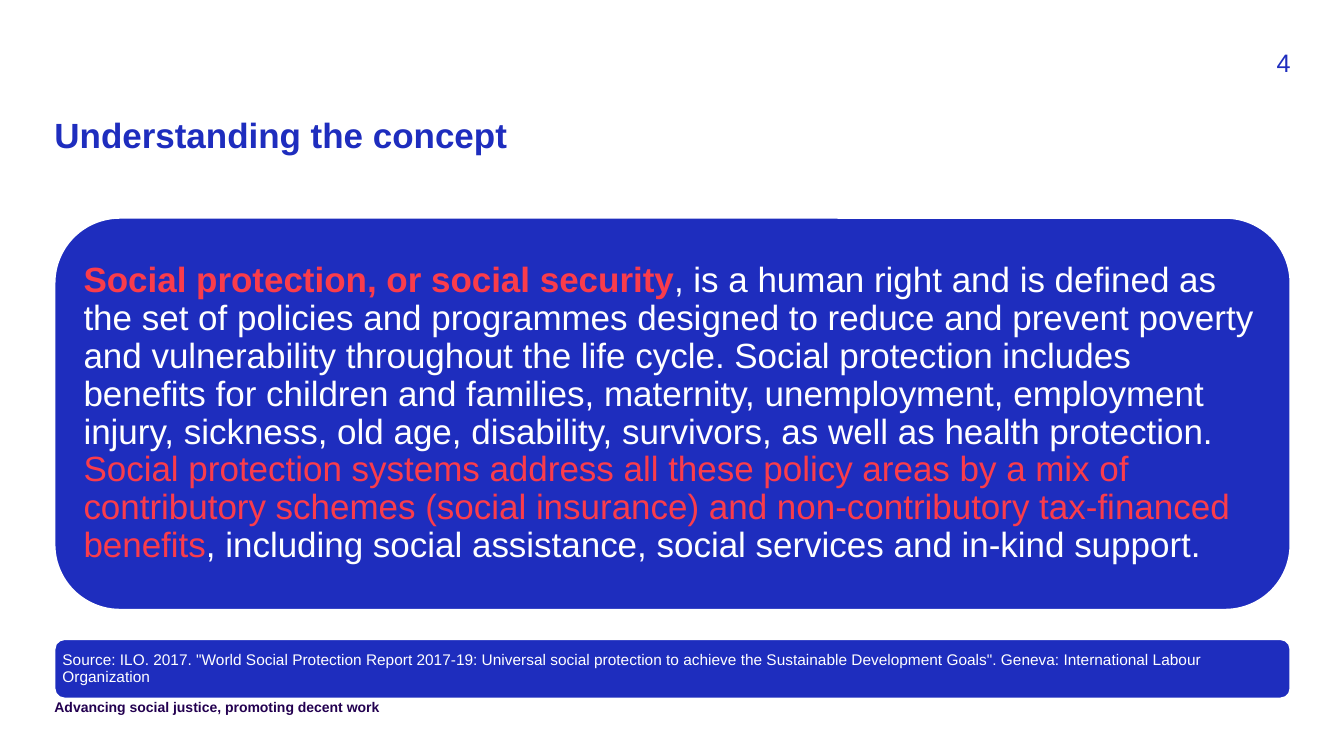
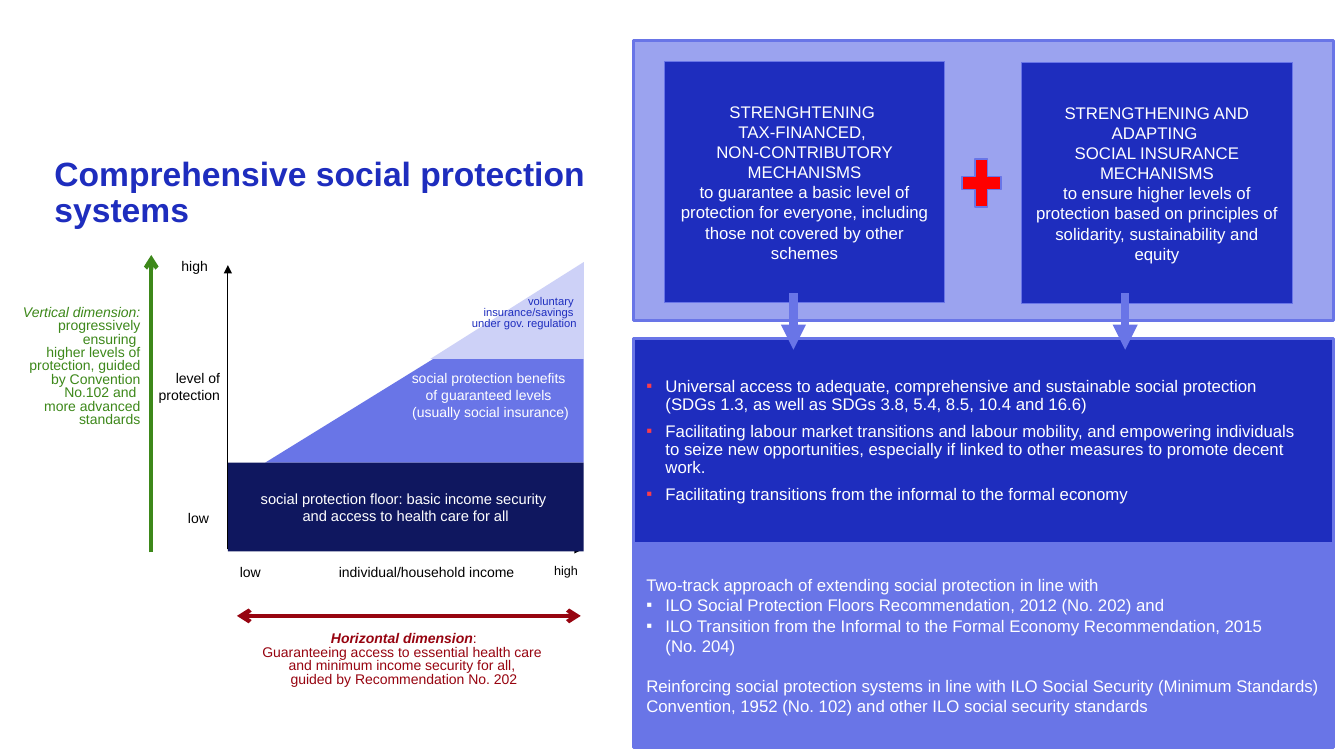
from dataclasses import dataclass
from typing import NamedTuple

from lxml.etree import SubElement
from pptx import Presentation
from pptx.dml.color import RGBColor
from pptx.enum.shapes import MSO_CONNECTOR, MSO_SHAPE
from pptx.enum.text import MSO_ANCHOR, MSO_AUTO_SIZE, PP_ALIGN
from pptx.oxml.ns import qn
from pptx.util import Inches, Pt

FONT = "Arial"
BLUE = RGBColor(0x1E, 0x2D, 0xBE)
MID_BLUE = RGBColor(0x69, 0x75, 0xE7)
LIGHT_BLUE = RGBColor(0x9B, 0xA3, 0xEF)
PALE_BLUE = RGBColor(0xCD, 0xD1, 0xF7)
NAVY = RGBColor(0x0F, 0x17, 0x5F)
PURPLE = RGBColor(0x23, 0x00, 0x50)
CORAL = RGBColor(0xFA, 0x3C, 0x4B)
RED = RGBColor(0xFF, 0x00, 0x00)
DARK_RED = RGBColor(0x97, 0x04, 0x10)
GREEN = RGBColor(0x3D, 0x88, 0x1A)
BLACK = RGBColor(0x00, 0x00, 0x00)
WHITE = RGBColor(0xFF, 0xFF, 0xFF)

LEFT, CENTER, RIGHT = PP_ALIGN.LEFT, PP_ALIGN.CENTER, PP_ALIGN.RIGHT
TOP, MIDDLE = MSO_ANCHOR.TOP, MSO_ANCHOR.MIDDLE
MARGIN, CONTENT_WIDTH = 0.54, 12.26
PANEL_LEFT, PANEL_WIDTH = 6.28, 6.95


class Box(NamedTuple):
    left: float
    top: float
    width: float
    height: float

    def lengths(self) -> list[Inches]:
        return [Inches(value) for value in self]


class Span(NamedTuple):
    text: str
    color: RGBColor | None = None
    bold: bool = False
    italic: bool = False


@dataclass
class Block:
    spans: list[Span]
    bullet: RGBColor | None = None
    before: float = 0
    after: float = 0


@dataclass
class Label:
    box: Box
    text: str
    align: PP_ALIGN = RIGHT
    size: float = 10
    color: RGBColor = BLACK
    spacing: float = 1


class Arrow(NamedTuple):
    start: tuple[float, float]
    end: tuple[float, float]
    color: RGBColor
    width: float
    tail: str
    head: str | None = None


def plain(text: str, **options) -> Block:
    return Block([Span(text)], **options)


def add_bullet(paragraph, color: RGBColor) -> None:
    properties = paragraph._p.get_or_add_pPr()
    properties.set("marL", str(Inches(0.19)))
    properties.set("indent", str(-Inches(0.19)))
    bullet_color = SubElement(properties, qn("a:buClr"))
    SubElement(bullet_color, qn("a:srgbClr")).set("val", str(color))
    SubElement(properties, qn("a:buFont")).set("typeface", FONT)
    SubElement(properties, qn("a:buChar")).set("char", "▪")


def write_text(frame, *blocks: Block, size: float, color: RGBColor, align=LEFT, anchor=TOP,
               spacing: float = 1, insets: tuple[float, float] = (0.1, 0.05)) -> None:
    frame.word_wrap = True
    frame.auto_size = MSO_AUTO_SIZE.NONE
    frame.vertical_anchor = anchor
    frame.margin_left = frame.margin_right = Inches(insets[0])
    frame.margin_top = frame.margin_bottom = Inches(insets[1])
    for index, block in enumerate(blocks):
        paragraph = frame.add_paragraph() if index else frame.paragraphs[0]
        if block.bullet is not None:
            add_bullet(paragraph, block.bullet)
        paragraph.alignment = align
        paragraph.line_spacing = spacing
        paragraph.space_before = Pt(block.before)
        paragraph.space_after = Pt(block.after)
        for span in block.spans:
            for number, line in enumerate(span.text.split("\n")):
                if number:
                    paragraph.add_line_break()
                if not line:
                    continue
                run = paragraph.add_run()
                run.text = line
                run.font.name = FONT
                run.font.size = Pt(size)
                run.font.bold = span.bold
                run.font.italic = span.italic
                run.font.color.rgb = span.color or color


def add_text(slide, box: Box, *blocks: Block, **options) -> None:
    write_text(slide.shapes.add_textbox(*box.lengths()).text_frame, *blocks, **options)


def add_label(slide, label: Label) -> None:
    add_text(slide, label.box, plain(label.text), size=label.size, color=label.color,
             align=label.align, spacing=label.spacing)


def add_figure(slide, kind: MSO_SHAPE, box: Box, fill: RGBColor,
               line: RGBColor | None = None, width: float = 1):
    shape = slide.shapes.add_shape(kind, *box.lengths())
    shape.shadow.inherit = False
    shape.fill.solid()
    shape.fill.fore_color.rgb = fill
    if line is None:
        shape.line.fill.background()
    else:
        shape.line.color.rgb = line
        shape.line.width = Pt(width)
    return shape


def add_wedge(slide, box: Box, fill: RGBColor) -> None:
    shape = add_figure(slide, MSO_SHAPE.RIGHT_TRIANGLE, box, fill)
    shape._element.spPr.find(qn("a:xfrm")).set("flipH", "1")


def add_arrow(slide, arrow: Arrow) -> None:
    ends = [Inches(value) for value in (*arrow.start, *arrow.end)]
    connector = slide.shapes.add_connector(MSO_CONNECTOR.STRAIGHT, *ends)
    connector.line.color.rgb = arrow.color
    connector.line.width = Pt(arrow.width)
    properties = connector._element.spPr
    line = properties.find(qn("a:ln"))
    for tag, style in (("a:headEnd", arrow.head), ("a:tailEnd", arrow.tail)):
        if style:
            SubElement(line, qn(tag)).set("type", style)
    SubElement(properties, qn("a:effectLst"))


def add_titled_slide(presentation, title: str, box: Box, size: float):
    slide = presentation.slides.add_slide(presentation.slide_layouts[5])
    placeholder = slide.shapes.title
    placeholder.left, placeholder.top, placeholder.width, placeholder.height = box.lengths()
    write_text(placeholder.text_frame, Block([Span(title, bold=True)]), size=size, color=BLUE,
               spacing=0.9, insets=(0, 0))
    return slide


def build_concept(presentation) -> None:
    slide = add_titled_slide(presentation, "Understanding the concept",
                             Box(MARGIN, 1.17, CONTENT_WIDTH, 0.78), 25)
    add_text(slide, Box(MARGIN, 6.93, 6.13, 0.2),
             Block([Span("Advancing social justice, promoting decent work", bold=True)]),
             size=10, color=PURPLE, insets=(0, 0))
    add_text(slide, Box(12.21, 0.47, 0.59, 0.31), plain("4"), size=18, color=BLUE,
             align=RIGHT, insets=(0, 0))
    definition = Block([
        Span("Social protection, or social security", CORAL, bold=True),
        Span(", is a human right and is defined as the set of policies and programmes designed to "
             "reduce and prevent poverty and vulnerability throughout the life cycle. Social "
             "protection includes benefits for children and families, maternity, unemployment, "
             "employment injury, sickness, old age, disability, survivors, as well as health "
             "protection. "),
        Span("Social protection systems address all these policy areas by a mix of contributory "
             "schemes (social insurance) and non-contributory tax-financed benefits", CORAL),
        Span(", including social assistance, social services and in-kind support."),
    ])
    source = plain('Source: ILO. 2017. "World Social Protection Report 2017-19: Universal social '
                   'protection to achieve the Sustainable Development Goals". Geneva: '
                   'International Labour Organization')
    for top, height, block, size, border, inset in (
        (2.16, 3.89, definition, 25, 0.19, 0.1),
        (6.34, 0.59, source, 11, 0.03, 0.05),
    ):
        add_figure(slide, MSO_SHAPE.ROUNDED_RECTANGLE, Box(MARGIN, top, CONTENT_WIDTH, height),
                   BLUE, WHITE, 1.5)
        add_text(slide, Box(MARGIN + border, top + border, CONTENT_WIDTH - 2 * border,
                            height - 2 * border),
                 block, size=size, color=WHITE, anchor=MIDDLE, spacing=0.9, insets=(inset, inset))


def draw_tracks(slide) -> None:
    add_figure(slide, MSO_SHAPE.RECTANGLE, Box(PANEL_LEFT, 0.4, PANEL_WIDTH, 2.78),
               LIGHT_BLUE, MID_BLUE, 2)
    for box, text in (
        (Box(10.13, 0.62, 2.69, 2.39),
         "STRENGTHENING AND ADAPTING \nSOCIAL INSURANCE MECHANISMS\nto ensure higher levels of "
         "protection based on principles of solidarity, sustainability and equity"),
        (Box(6.59, 0.61, 2.78, 2.39),
         "STRENGHTENING \nTAX-FINANCED, \nNON-CONTRIBUTORY MECHANISMS\nto guarantee a basic level "
         "of protection for everyone, including those not covered by other schemes"),
    ):
        track = add_figure(slide, MSO_SHAPE.RECTANGLE, box, BLUE, MID_BLUE)
        write_text(track.text_frame, plain(text), size=12, color=WHITE, align=CENTER,
                   anchor=MIDDLE)
    add_figure(slide, MSO_SHAPE.MATH_PLUS, Box(9.47, 1.49, 0.53, 0.65), RED, MID_BLUE)
    goals = [plain(text, bullet=CORAL, before=3 if index else 0, after=3)
             for index, text in enumerate((
                 "Universal access to adequate, comprehensive and sustainable social protection "
                 "\n(SDGs 1.3, as well as SDGs 3.8, 5.4, 8.5, 10.4 and 16.6)",
                 "Facilitating labour market transitions and labour mobility, and empowering "
                 "individuals \nto seize new opportunities, especially if linked to other "
                 "measures to promote decent work.",
                 "Facilitating transitions from the informal to the formal economy"))]
    standards = [
        plain("Two-track approach of extending social protection in line with"),
        plain("ILO Social Protection Floors Recommendation, 2012 (No. 202) and", bullet=WHITE),
        plain("ILO Transition from the Informal to the Formal Economy Recommendation, 2015 "
              "\n(No. 204)", bullet=WHITE),
        plain("Reinforcing social protection systems in line with ILO Social Security (Minimum "
              "Standards) Convention, 1952 (No. 102) and other ILO social security standards",
              before=14.5),
    ]
    for top, fill, blocks, spacing in ((3.36, BLUE, goals, 0.9), (5.39, MID_BLUE, standards, 1)):
        panel = add_figure(slide, MSO_SHAPE.RECTANGLE, Box(PANEL_LEFT, top, PANEL_WIDTH, 2.03),
                           fill, MID_BLUE, 2)
        write_text(panel.text_frame, *blocks, size=12, color=WHITE, anchor=MIDDLE,
                   spacing=spacing, insets=(0.13, 0.13))
    for x in (7.87, 11.16):
        add_arrow(slide, Arrow((x, 2.91), (x, 3.47), MID_BLUE, 6, "triangle"))


def draw_staircase(slide) -> None:
    add_wedge(slide, Box(2.63, 2.64, 3.16, 1.95), MID_BLUE)
    add_wedge(slide, Box(4.27, 2.6, 1.52, 0.96), PALE_BLUE)
    add_arrow(slide, Arrow((2.26, 5.45), (5.78, 5.45), BLACK, 0.75, "triangle"))
    floor = add_figure(slide, MSO_SHAPE.RECTANGLE, Box(2.26, 4.59, 3.53, 0.88), NAVY)
    write_text(floor.text_frame,
               plain("social protection floor: basic income security \nand access to health care "
                     "for all"),
               size=10.5, color=WHITE, align=CENTER, anchor=MIDDLE)
    for arrow in (
        Arrow((2.26, 5.45), (2.26, 2.63), BLACK, 0.75, "triangle"),
        Arrow((1.5, 5.48), (1.5, 2.53), GREEN, 3, "arrow"),
        Arrow((5.76, 6.11), (2.35, 6.11), DARK_RED, 3, "arrow", "arrow"),
    ):
        add_arrow(slide, arrow)
    for label in (
        Label(Box(2.71, 5.54, 3.04, 0.41), "individual/household income", CENTER),
        Label(Box(1.36, 3.62, 0.92, 0.66), "level of protection"),
        Label(Box(1.43, 2.51, 0.73, 0.45), "high"),
        Label(Box(1.44, 5.01, 0.73, 0.45), "low"),
        Label(Box(2.28, 5.54, 0.73, 0.45), "low", LEFT),
        Label(Box(5.19, 5.54, 0.64, 0.34), "high", size=9),
        Label(Box(4.37, 2.9, 1.45, 0.63), "voluntary \ninsurance/savings \nunder gov. regulation",
              size=8, color=BLUE, spacing=0.8),
        Label(Box(3.55, 3.62, 2.63, 1.03), "social protection benefits \nof guaranteed levels \n"
              "(usually social insurance)", CENTER, color=WHITE),
    ):
        add_label(slide, label)
    add_text(slide, Box(0.11, 2.99, 1.38, 2.68),
             Block([Span("Vertical dimension:", italic=True),
                    Span(" progressively ensuring \nhigher levels of protection, guided by "
                         "Convention No.102 and \nmore advanced standards")]),
             size=10, color=GREEN, align=RIGHT, spacing=0.8)
    add_text(slide, Box(1.78, 6.23, 4.45, 1.08),
             Block([Span("Horizontal dimension", bold=True, italic=True),
                    Span(":\nGuaranteeing access to essential health care \nand minimum income "
                         "security for all, \nguided by Recommendation No. 202")]),
             size=10, color=DARK_RED, align=CENTER, spacing=0.8)


def build_systems(presentation) -> None:
    slide = add_titled_slide(presentation, "Comprehensive social protection systems",
                             Box(MARGIN, 1.56, 5.43, 1.1), 24)
    draw_tracks(slide)
    draw_staircase(slide)


def main() -> None:
    presentation = Presentation()
    presentation.slide_width = Inches(13.33)
    presentation.slide_height = Inches(7.5)
    build_concept(presentation)
    build_systems(presentation)
    presentation.save("out.pptx")


if __name__ == "__main__":
    main()
